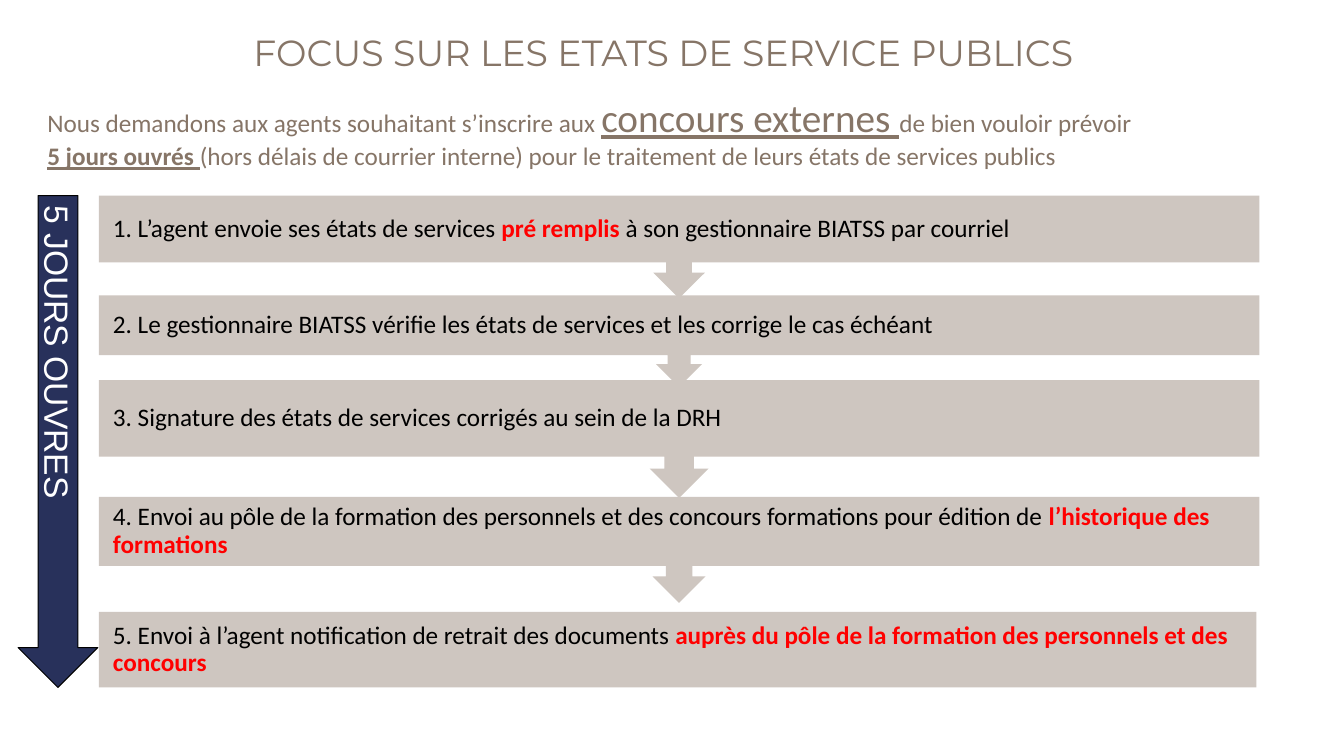
from pptx import Presentation
from pptx.dml.color import RGBColor
from pptx.enum.shapes import MSO_SHAPE
from pptx.enum.text import MSO_ANCHOR, MSO_AUTO_SIZE, PP_ALIGN
from pptx.util import Inches, Pt

BROWN, SAND, NAVY = "867567", "CEC6C0", "28315B"
BLACK, WHITE, RED = "000000", "FFFFFF", "FF0000"
KEY = {"bold": True, "color": RED}
STEPS = [
    (0, 20.9, [("1. L’agent envoie ses états de services ", {}),
               ("pré remplis ", KEY),
               ("à son gestionnaire BIATSS par courriel", {})]),
    (20.29, 18.65, [("2. Le gestionnaire BIATSS vérifie les états de services "
                     "et les corrige le cas échéant", {})]),
    (37.5, 23.98, [("3. Signature des états de services corrigés "
                    "au sein de la DRH", {})]),
    (61.27, 21.52, [("4. Envoi au pôle de la formation des personnels et des "
                     "concours formations pour édition de ", {}),
                    ("l’historique des formations", KEY)]),
    (84.63, 15.37, [("5. Envoi à l’agent notification de retrait "
                     "des documents ", {}),
                    ("auprès du pôle de la formation des personnels "
                     "et des concours", KEY)]),
]
INTRO = [
    [("Nous demandons aux agents souhaitant s’inscrire aux ", {}),
     ("concours externes ", {"size": Pt(28), "underline": True}),
     ("de bien vouloir prévoir", {})],
    [("5 jours ouvrés ", {"bold": True, "underline": True}),
     ("(hors délais de courrier interne) pour le traitement "
      "de leurs états de services publics", {})],
]


def paint(part, color):
    """Give a font, or a fill made solid, a hex colour."""
    target = part.color if hasattr(part, "color") else part.fore_color
    target.rgb = RGBColor.from_string(color)


def share(box, left, top, width, height):
    """Return the part of a box given in percent of its sides."""
    x, y, w, h = box
    return (int(x + w * left / 100), int(y + h * top / 100),
            int(w * width / 100), int(h * height / 100))


def write(para, runs, size, color, name="Calibri"):
    """Fill a paragraph with runs that share one font."""
    para.font.name, para.font.size = name, Pt(size)
    paint(para.font, color)
    for text, style in runs:
        run = para.add_run()
        run.text = text
        for key, value in style.items():
            if key == "color":
                paint(run.font, value)
            else:
                setattr(run.font, key, value)


def block(slide, kind, box, color):
    """Add a plain filled shape without line or shadow."""
    shape = slide.shapes.add_shape(kind, *box)
    shape.shadow.inherit = False
    shape.fill.solid()
    paint(shape.fill, color)
    shape.line.fill.background()
    return shape


def heading(slide, box):
    """Place the slide title."""
    title = slide.shapes.title
    title.left, title.top, title.width, title.height = box
    frame = title.text_frame
    frame.auto_size = MSO_AUTO_SIZE.NONE
    frame.vertical_anchor = MSO_ANCHOR.BOTTOM
    para = frame.paragraphs[0]
    para.alignment, para.line_spacing = PP_ALIGN.CENTER, 0.9
    write(para, [("FOCUS SUR LES ETATS DE SERVICE PUBLICS", {})],
          25.9, BROWN, "Montserrat")


def intro(slide, box):
    """Place the two opening lines."""
    frame = slide.shapes.add_textbox(*box).text_frame
    frame.word_wrap = True
    frame.auto_size = MSO_AUTO_SIZE.SHAPE_TO_FIT_TEXT
    for i, runs in enumerate(INTRO):
        para = frame.add_paragraph() if i else frame.paragraphs[0]
        write(para, runs, 18, BROWN)


def step(slide, box, runs, last):
    """Place one step, with an arrow down unless it is the last."""
    if last:
        block(slide, MSO_SHAPE.RECTANGLE, box, SAND)
    else:
        kind = MSO_SHAPE.UP_ARROW_CALLOUT
        block(slide, kind, box, SAND).rotation = 180
        box = share(box, 0, 0, 100, 65)
    frame = slide.shapes.add_textbox(*box).text_frame
    frame.word_wrap = True
    frame.vertical_anchor = MSO_ANCHOR.MIDDLE
    frame.margin_left = frame.margin_right = Inches(0.14)
    frame.margin_top = frame.margin_bottom = Inches(0.14)
    para = frame.paragraphs[0]
    para.line_spacing = 0.9
    write(para, runs, 18, BLACK)


def flow(slide, box):
    """Stack the steps from the bottom up."""
    end = len(STEPS) - 1
    for i, (top, height, runs) in reversed(list(enumerate(STEPS))):
        width = 99.74 if i == end else 100
        step(slide, share(box, 0, top, width, height), runs, i == end)


def delay(slide, box):
    """Place the tall arrow that states the delay."""
    arrow = block(slide, MSO_SHAPE.DOWN_ARROW, box, NAVY)
    arrow.line.fill.solid()
    paint(arrow.line.fill, BLACK)
    arrow.line.width = Pt(0.75)
    frame = arrow.text_frame
    frame.vertical_anchor = MSO_ANCHOR.MIDDLE
    frame._txBody.bodyPr.set("vert", "eaVert")
    para = frame.paragraphs[0]
    para.alignment = PP_ALIGN.CENTER
    write(para, [("5 JOURS OUVRES", {})], 24, WHITE, "Arial")


def main():
    """Build the slide and save it."""
    deck = Presentation()
    deck.slide_width, deck.slide_height = Inches(13.33), Inches(7.5)
    slide = deck.slides.add_slide(deck.slide_layouts[5])
    page = (0, 0, deck.slide_width, deck.slide_height)
    heading(slide, share(page, 17.48, 2, 63.77, 8.53))
    intro(slide, share(page, 2.78, 11.73, 93.25, 11.73))
    flow(slide, share(page, 7.35, 25.87, 86.35, 65.07))
    delay(slide, share(page, 1.35, 25.87, 5.93, 65.07))
    deck.save("out.pptx")


if __name__ == "__main__":
    main()
